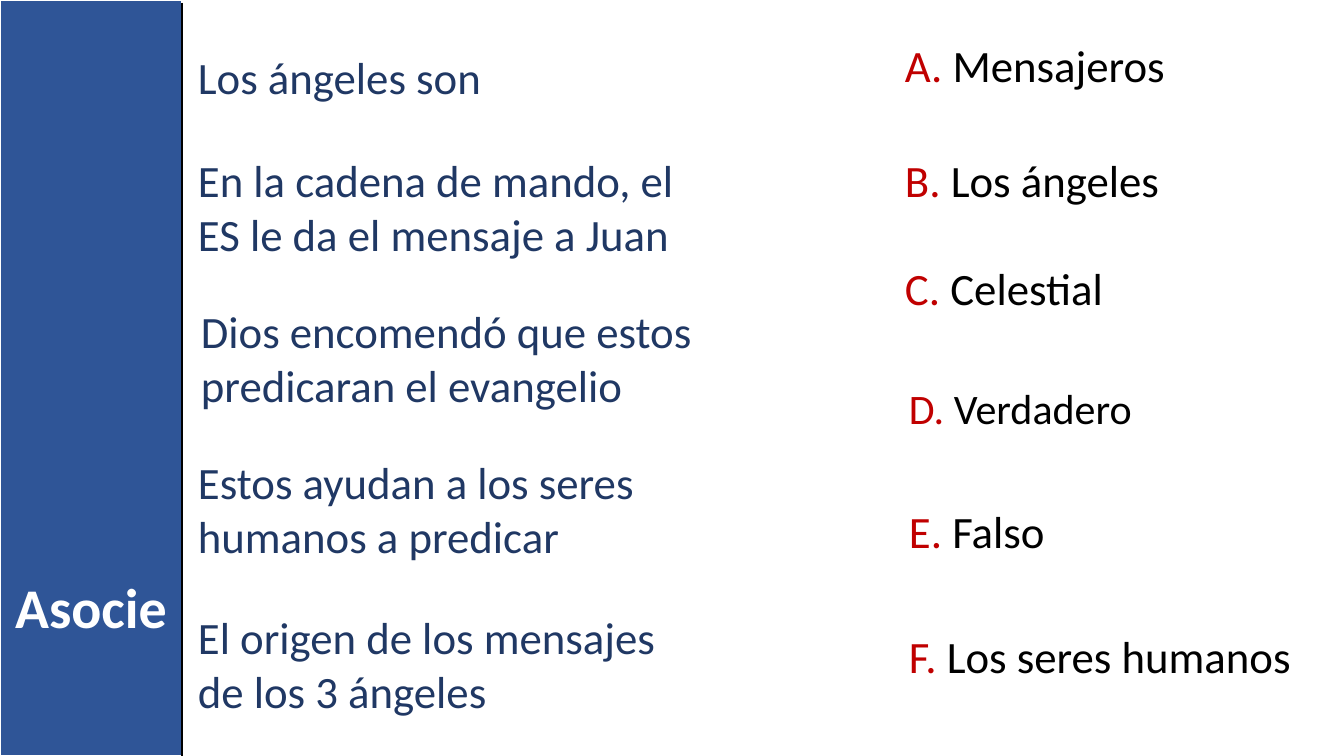
from pptx import Presentation
from pptx.dml.color import RGBColor
from pptx.enum.shapes import MSO_CONNECTOR, MSO_SHAPE
from pptx.enum.text import PP_ALIGN
from pptx.oxml.ns import qn
from pptx.util import Emu, Pt
from lxml.etree import SubElement

# Content: text, left, top, width, height (px)
QUESTIONS = [
    ("Los ángeles son", 188, 45, 480, 65),
    ("En la cadena de mando, el ES le da el mensaje a Juan", 188, 148, 520, 119),
    ("Dios encomendó que estos predicaran el evangelio", 191, 299, 514, 119),
    ("Estos ayudan a los seres humanos a predicar", 188, 450, 498, 119),
    ("El origen de los mensajes de los 3 ángeles", 188, 605, 520, 119),
]
# Answer, left, top (px), font size (pt)
ANSWERS = [
    ("Mensajeros", 895, 33, 32),
    ("Los ángeles", 895, 148, 32),
    ("Celestial", 895, 256, 32),
    ("Verdadero", 899, 378, 30),
    ("Falso", 899, 499, 32),
    ("Los seres humanos", 899, 624, 32),
]
TITLE = "Asocie"
COLORS = {"band": "2F5597", "question": "203864", "letter": "C00000",
          "black": "000000", "white": "FFFFFF"}
FONT = "Calibri"
WIDTH, HEIGHT, BAND_WIDTH = 1344, 756, 182
ANSWER_WIDTH, ANSWER_HEIGHT = 418, 65


def px(length):
    return Emu(round(length * 914400 / 100.8))


def color(name):
    return RGBColor.from_string(COLORS[name])


def add_text(slide, spans, left, top, width, height, size, bold=False,
             align=PP_ALIGN.LEFT):
    box = slide.shapes.add_textbox(px(left), px(top), px(width), px(height))
    box.text_frame.word_wrap = True
    para = box.text_frame.paragraphs[0]
    para.alignment = align
    for text, color_name in spans:
        span = para.add_run()
        span.text = text
        span.font.name = FONT
        span.font.size = Pt(size)
        span.font.bold = bold
        span.font.color.rgb = color(color_name)


def main():
    deck = Presentation()
    deck.slide_width, deck.slide_height = px(WIDTH), px(HEIGHT)
    slide = deck.slides.add_slide(deck.slide_layouts[6])

    # Side band
    band = slide.shapes.add_shape(MSO_SHAPE.RECTANGLE, 0, 0, px(BAND_WIDTH), px(HEIGHT))
    band.shadow.inherit = False
    band.fill.solid()
    band.fill.fore_color.rgb = color("band")
    band.line.color.rgb = color("white")
    band.line.width = Pt(1.5)

    # Questions
    for text, left, top, width, height in QUESTIONS:
        add_text(slide, [(text, "question")], left, top, width, height, 32)

    # Lettered answers
    for letter, (text, left, top, size) in zip("ABCDEF", ANSWERS):
        add_text(slide, [(f"{letter}. ", "letter"), (text, "black")],
                 left, top, ANSWER_WIDTH, ANSWER_HEIGHT, size)

    # Band title and edge line
    add_text(slide, [(TITLE, "white")], 0, 568, BAND_WIDTH, 78, 40, True, PP_ALIGN.CENTER)
    edge = slide.shapes.add_connector(MSO_CONNECTOR.STRAIGHT, px(BAND_WIDTH), px(3),
                                      px(BAND_WIDTH), px(HEIGHT))
    edge.line.color.rgb = color("black")
    edge.line.width = Pt(1)
    SubElement(edge._element.spPr, qn("a:effectLst"))

    deck.save("out.pptx")


if __name__ == "__main__":
    main()
